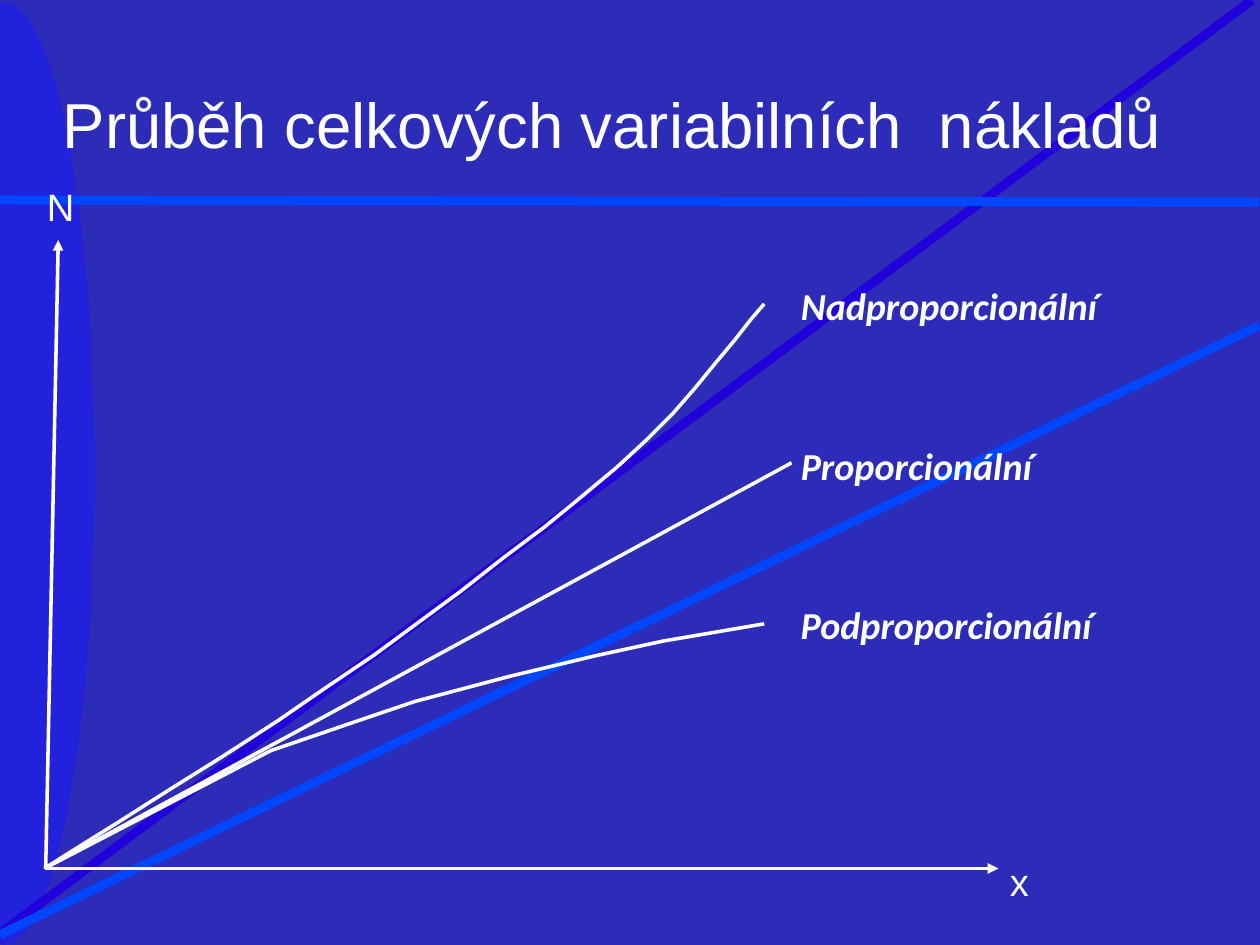
import math
from dataclasses import dataclass

from lxml import etree
from pptx import Presentation
from pptx.dml.color import RGBColor
from pptx.enum import shapes, text
from pptx.oxml import ns
from pptx import util as u

PX = 9144  # EMU per px, 100 px to the inch


@dataclass(frozen=True)
class Theme:
    back: str = "2C2CB8"
    oval: str = "2222DC"
    violet: str = "2200DC"
    azure: str = "0046FF"
    ink: str = "FFFFFF"
    title_size: int = 40
    label_size: int = 24
    band: float = 5.67
    stroke: float = 2.25
    sans: str = "Arial"
    label: str = "Calibri"


T = Theme()

OVER_CURVE = [
    (39, 760), (66, 743), (103, 720), (147, 692), (195, 662), (243, 631),
    (288, 600), (328, 573), (366, 545), (404, 517), (441, 488), (477, 461),
    (510, 434), (540, 409), (566, 385), (589, 362), (609, 339), (627, 317),
    (643, 298), (657, 280), (669, 266)]
UNDER_CURVE = [
    (39, 760), (237, 657), (310, 632), (363, 614), (446, 592), (521, 574),
    (581, 561), (669, 546)]


def color(code):
    return RGBColor.from_string(code)


def add_line(s, start, end, code, width, arrow=False):
    ends = [v * PX for v in (*start, *end)]
    c = s.shapes.add_connector(shapes.MSO_CONNECTOR.STRAIGHT, *ends)
    c.line.color.rgb = color(code)
    c.line.width = u.Pt(width)
    if arrow:
        etree.SubElement(c.line._get_or_add_ln(), ns.qn("a:tailEnd"), type="triangle")
    etree.SubElement(c._element.spPr, ns.qn("a:effectLst"))


def add_outline(s, points, fill=None, line=None):
    builder = s.shapes.build_freeform(*points[0], scale=float(PX))
    builder.add_line_segments(points[1:], close=fill is not None)
    sp = builder.convert_to_shape()
    sp.shadow.inherit = False
    if fill:
        sp.fill.solid()
        sp.fill.fore_color.rgb = color(fill)
        sp.line.fill.background()
    else:
        sp.fill.background()
        sp.line.color.rgb = color(line)
        sp.line.width = u.Pt(T.stroke)


def add_text(s, box, words, size, font, strong=False, spacing=None, tab=None):
    tf = s.shapes.add_textbox(*[v * PX for v in box]).text_frame
    tf.margin_left = tf.margin_top = tf.margin_right = tf.margin_bottom = 0
    tf.word_wrap = False
    tf.auto_size = text.MSO_AUTO_SIZE.SHAPE_TO_FIT_TEXT
    p = tf.paragraphs[0]
    if spacing:
        p.line_spacing = u.Pt(spacing)
    pPr = p._p.get_or_add_pPr()
    pPr.set("marL", str(PX))
    if tab:
        tabs = etree.SubElement(pPr, ns.qn("a:tabLst"))
        etree.SubElement(tabs, ns.qn("a:tab"), pos=str(tab * PX), algn="l")
    r = p.add_run()
    r.text = words
    r.font.size = u.Pt(size)
    r.font.name = font
    r.font.bold = r.font.italic = strong
    r.font.color.rgb = color(T.ink)


def add_backdrop(s):
    s.background.fill.solid()
    s.background.fill.fore_color.rgb = color(T.back)
    # Right part of a tall oval, cut off by the slide edge
    angles = [math.pi * i / 48 for i in range(49)]
    arc = [(round(4 + 79 * math.sin(a), 2), round(414.5 - 412.5 * math.cos(a), 2))
           for a in angles]
    add_outline(s, [(0, 3), *arc, (0, 826)], fill=T.oval)
    # Crossing bands
    add_line(s, (1096, 0), (0, 817), T.violet, T.band)
    add_line(s, (1102, 177), (0, 175), T.azure, T.band)
    add_line(s, (1102, 285), (0, 818), T.azure, T.band)


def add_cost_graph(s):
    # Axes
    add_line(s, (39, 760), (874, 760), T.ink, T.stroke, arrow=True)
    add_line(s, (40, 760), (51, 210), T.ink, T.stroke, arrow=True)
    # Cost curves
    for curve in (OVER_CURVE, UNDER_CURVE):
        add_outline(s, curve, line=T.ink)
    add_line(s, (39, 760), (693, 405), T.ink, T.stroke)
    # Curve names
    names = [("Nadproporcionální", 247, 262), ("Proporcionální", 387, 205),
             ("Podproporcionální", 526, 257)]
    for name, top, width in names:
        add_text(s, (700, top, width, 40), name, T.label_size, T.label, strong=True)
    # Axis names
    add_text(s, (883, 751, 19, 40), "x", T.label_size, T.sans)
    add_text(s, (40, 161, 27, 41), "N", T.label_size, T.sans, spacing=28.6)


def main():
    prs = Presentation()
    prs.slide_width, prs.slide_height = 1103 * PX, 827 * PX
    s = prs.slides.add_slide(prs.slide_layouts[6])
    add_backdrop(s)
    add_text(s, (54, 75, 963, 67), "Průběh celkových variabilních\tnákladů",
             T.title_size, T.sans, spacing=47.6, tab=767)
    add_cost_graph(s)
    prs.save("out.pptx")


if __name__ == "__main__":
    main()
